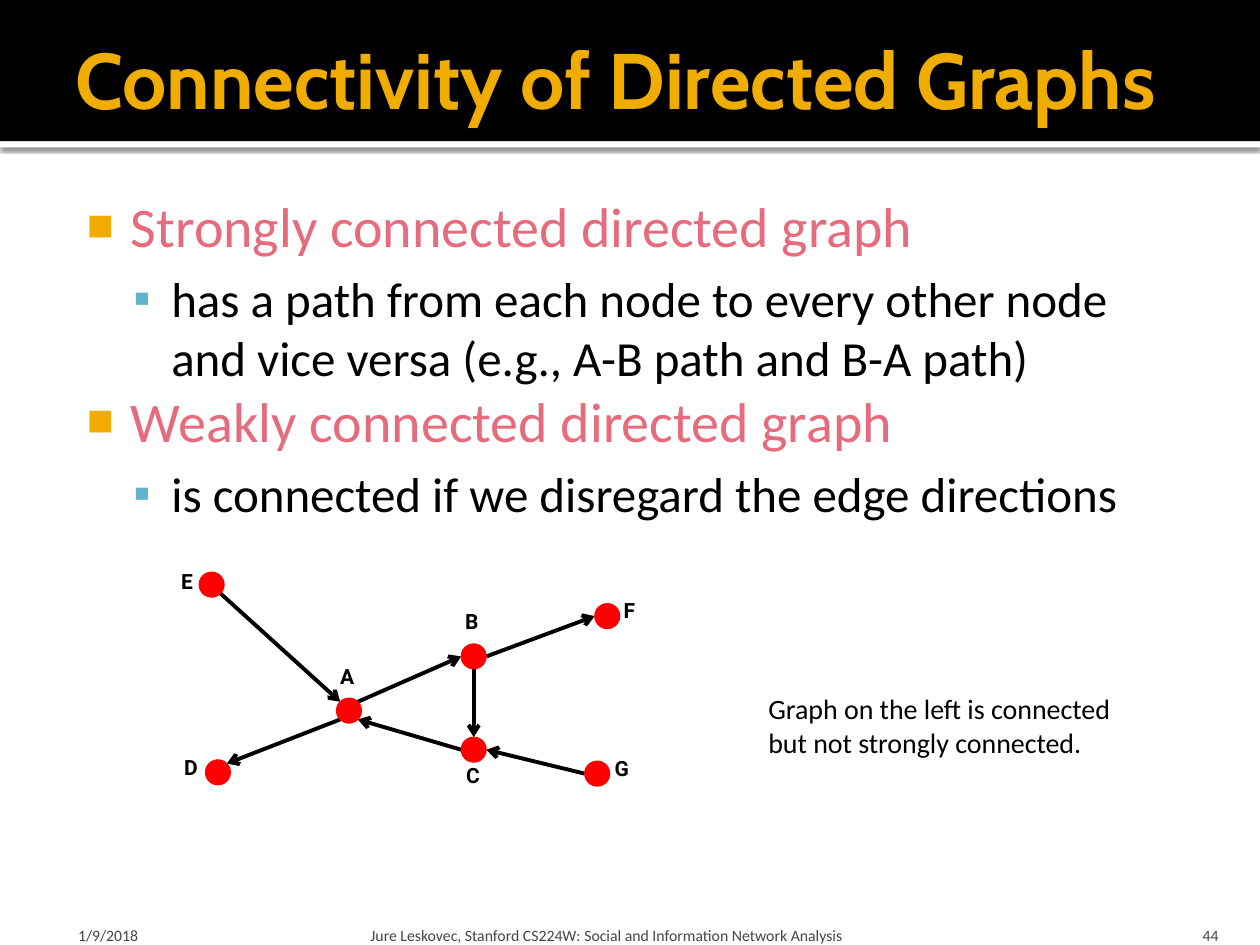
from lxml.etree import SubElement
from pptx import Presentation
from pptx.dml.color import RGBColor
from pptx.enum.shapes import MSO_CONNECTOR, MSO_SHAPE
from pptx.enum.text import MSO_ANCHOR, PP_ALIGN
from pptx.oxml import parse_xml
from pptx.oxml.ns import nsdecls, qn
from pptx.util import Inches, Pt

BLACK = RGBColor(0x00, 0x00, 0x00)
WHITE = RGBColor(0xFF, 0xFF, 0xFF)
RED = RGBColor(0xFF, 0x00, 0x00)
GOLD = RGBColor(0xF0, 0xAD, 0x00)
PINK = RGBColor(0xE6, 0x6C, 0x7D)
BLUE = RGBColor(0x60, 0xB5, 0xCC)
GRAY = RGBColor(0x45, 0x45, 0x45)

prs = Presentation()
prs.slide_width, prs.slide_height = Inches(10), Inches(7.5)
slide = prs.slides.add_slide(prs.slide_layouts[6])
shapes = slide.shapes


def add_text(text, box, size, color=BLACK, font="Calibri", bold=False, align=PP_ALIGN.LEFT,
             anchor=MSO_ANCHOR.TOP, insets=(0.1, 0.05, 0.1, 0.05), wrap=True, styles=None):
    """Add a text box; styles gives size, colour, level and bullet per paragraph."""
    frame = shapes.add_textbox(*map(Inches, box)).text_frame
    frame.word_wrap = wrap
    frame.vertical_anchor = anchor
    (frame.margin_left, frame.margin_top,
     frame.margin_right, frame.margin_bottom) = map(Inches, insets)
    lines = text if styles else [text]
    for i, line in enumerate(lines):
        paragraph = frame.paragraphs[0] if i == 0 else frame.add_paragraph()
        paragraph.text = line
        paragraph.alignment = align
        if styles:
            style = styles[i]
            size, color = style["size"], style["color"]
            paragraph.level = style["level"]
            props = paragraph._p.get_or_add_pPr()
            props.set("marL", str(Inches(style["margin"])))
            props.set("indent", str(Inches(style["indent"])))
            if style["level"]:
                before = SubElement(props, qn("a:spcBef"))
                SubElement(before, qn("a:spcPct"), val="20000")
            bullet_color = SubElement(props, qn("a:buClr"))
            SubElement(bullet_color, qn("a:srgbClr"), val=str(style["bullet_color"]))
            SubElement(props, qn("a:buSzPct"), val=style["bullet_size"])
            SubElement(props, qn("a:buFont"), typeface="Arial")
            SubElement(props, qn("a:buChar"), char=style["bullet"])
        for run in paragraph.runs:
            run.font.size = Pt(size)
            run.font.name = font
            run.font.bold = bold
            run.font.color.rgb = color


def add_filled(preset, box, color):
    shape = shapes.add_shape(preset, *map(Inches, box))
    shape.shadow.inherit = False
    shape.fill.solid()
    shape.fill.fore_color.rgb = color
    shape.line.fill.background()
    return shape


# Header band
header_rule = add_filled(MSO_SHAPE.RECTANGLE, (0, 1.12, 10, 0.05), WHITE)
header_rule._element.spPr.find(qn("a:effectLst")).append(parse_xml(
    f'<a:outerShdw {nsdecls("a")} blurRad="{Pt(2.5)}" dist="{Pt(0.8)}" dir="5400000">'
    '<a:srgbClr val="000000"><a:alpha val="60000"/></a:srgbClr></a:outerShdw>'))
add_filled(MSO_SHAPE.RECTANGLE, (0, 0, 10, 1.12), BLACK)
add_text("Connectivity of Directed Graphs", (0.5, 0.08, 9, 1.08), 45, color=GOLD, font="Cabin",
         bold=True, anchor=MSO_ANCHOR.MIDDLE, insets=(0.1, 0.05, 0.05, 0.05))

# Definitions
term = dict(size=32, color=PINK, level=0, margin=0.48, indent=-0.35,
            bullet="■", bullet_color=GOLD, bullet_size="80000")
meaning = dict(size=28, color=BLACK, level=1, margin=0.8, indent=-0.3,
               bullet="▪", bullet_color=BLUE, bullet_size="100000")
add_text(["Strongly connected directed graph",
          "has a path from each node to every other node and vice versa "
          "(e.g., A-B path and B-A path)",
          "Weakly connected directed graph",
          "is connected if we disregard the edge directions"],
         (0.5, 1.42, 9, 3.09), 32, insets=(0.06, 0.1, 0.1, 0.05),
         styles=[term, meaning, term, meaning])

# Graph: node centres, label positions, and edges between points on the node rims
RADIUS, DIAGONAL = 0.1, 0.07
centers = {"A": (2.77, 5.64), "B": (3.76, 5.21), "C": (3.76, 5.95), "D": (1.73, 6.13),
           "E": (1.68, 4.64), "F": (4.82, 4.89), "G": (4.74, 6.14)}
labels = {"A": (2.62, 5.27), "B": (3.61, 4.83), "C": (3.62, 6.05), "D": (1.38, 5.99),
          "E": (1.35, 4.51), "F": (4.86, 4.74), "G": (4.8, 6)}
rim = {"top": (0, -RADIUS), "bottom": (0, RADIUS), "left": (-RADIUS, 0), "right": (RADIUS, 0),
       "top left": (-DIAGONAL, -DIAGONAL), "top right": (DIAGONAL, -DIAGONAL),
       "bottom left": (-DIAGONAL, DIAGONAL), "bottom right": (DIAGONAL, DIAGONAL)}
edges = [("E", "bottom right", "A", "top left"), ("A", "top right", "B", "left"),
         ("B", "bottom", "C", "top"), ("C", "left", "A", "bottom right"),
         ("G", "left", "C", "right"), ("B", "right", "F", "left"),
         ("A", "bottom left", "D", "top right")]

for source, source_side, target, target_side in edges:
    ends = [Inches(center + offset)
            for node, side in ((source, source_side), (target, target_side))
            for center, offset in zip(centers[node], rim[side])]
    edge = shapes.add_connector(MSO_CONNECTOR.STRAIGHT, *ends)
    edge.line.color.rgb = BLACK
    edge.line.width = Pt(2.25)
    SubElement(edge.line._get_or_add_ln(), qn("a:tailEnd"), type="arrow")
    SubElement(edge._element.spPr, qn("a:effectLst"))

for name, (x, y) in labels.items():
    add_text(name, (x, y, 0.27, 0.2), 12, font="Roboto", bold=True,
             align=PP_ALIGN.CENTER, insets=(0.03, 0, 0.03, 0))

for x, y in centers.values():
    node = add_filled(MSO_SHAPE.OVAL, (x - RADIUS, y - RADIUS, 2 * RADIUS, 2 * RADIUS), RED)
    node.line.color.rgb = RED
    node.line.width = Pt(0.5)

add_text("Graph on the left is connected\vbut not strongly connected.",
         (6, 5.44, 2.96, 0.64), 16, wrap=False)

# Footer
footer = dict(size=9, color=GRAY, anchor=MSO_ANCHOR.BOTTOM)
add_text("1/9/2018", (0.5, 7.2, 2.33, 0.3), insets=(0.12, 0.05, 0.05, 0), **footer)
add_text("Jure Leskovec, Stanford CS224W: Social and Information Network Analysis",
         (2.89, 7.2, 6.02, 0.3), insets=(0.05, 0.05, 0.05, 0), **footer)
add_text("44", (8.97, 7.2, 0.8, 0.3), align=PP_ALIGN.RIGHT,
         insets=(0.1, 0.05, 0.1, 0), **footer)

prs.save("out.pptx")
